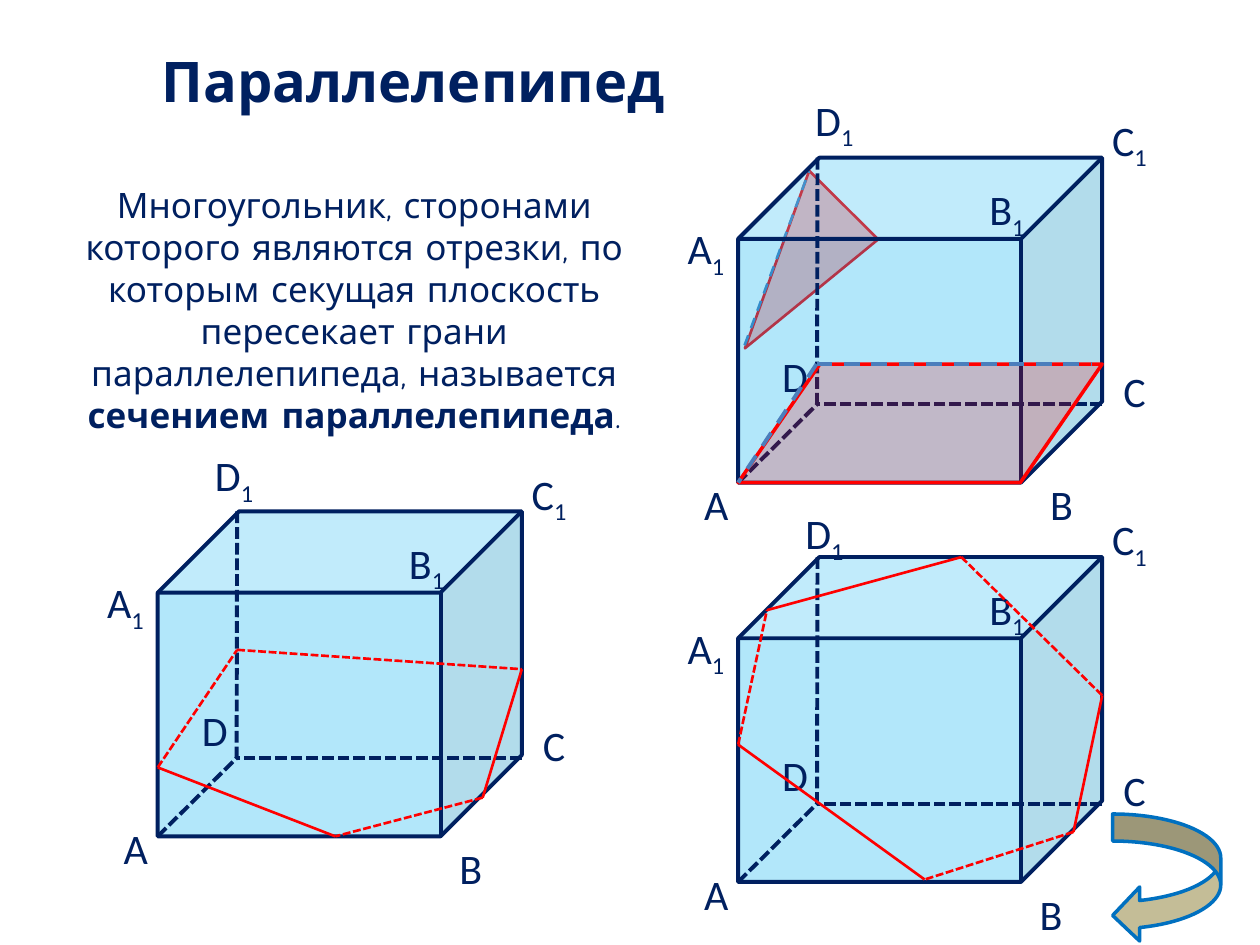
"""Slide on plane sections of a parallelepiped."""
from lxml.etree import SubElement
from pptx import Presentation
from pptx.dml.color import RGBColor
from pptx.enum.dml import MSO_LINE
from pptx.enum.shapes import MSO_CONNECTOR, MSO_SHAPE
from pptx.enum.text import MSO_AUTO_SIZE, PP_ALIGN
from pptx.oxml.ns import qn
from pptx.util import Cm, Pt

NAVY, RED, SKY, STEEL = "002060", "FF0000", "00B0F0", "4B7EBC"
SOLID, DOTTED, DASHED = None, MSO_LINE.SQUARE_DOT, MSO_LINE.DASH

TITLE = "Параллелепипед"
DEFINITION = [
    ("Многоугольник, сторонами которого являются отрезки, по которым секущая "
     "плоскость пересекает грани параллелепипеда, называется ", False),
    ("сечением параллелепипеда", True),
    (".", False),
]

SOLID_SIZE = (7.34, 6.55)
HIDDEN_VERTEX = (1.59, 4.97)
HIDDEN_ENDS = [(0, 6.55), (1.6, 0), (7.34, 4.97)]
VERTEX_LABELS = {
    "A1": (-1.4, 1.19), "A": (-1.19, 6.15), "B1": (4.67, 0.4), "C1": (7.14, -1),
    "D": (0.4, 3.76), "B": (5.56, 6.55), "C": (7.24, 4.06),
}
SOLIDS = [
    {"origin": (14.88, 3.18), "section": [],
     "labels": {"A": (-1.19, 6.35), "B": (5.77, 6.35), "D1": (1.19, -1.4)}},
    {"origin": (3.18, 10.31), "labels": {"D1": (0.79, -1.37)},
     "section": [(0, 5.16, DOTTED), (1.6, 2.79, DOTTED), (7.34, 3.18, SOLID),
                 (6.55, 5.77, DOTTED), (3.58, 6.55, SOLID)]},
    {"origin": (14.88, 11.23), "labels": {"D1": (0.99, -1.12)},
     "section": [(0, 3.78, DOTTED), (0.58, 1.07, SOLID), (4.5, 0, DOTTED),
                 (7.34, 2.79, SOLID), (6.76, 5.54, DOTTED), (3.76, 6.5, SOLID)]},
]

presentation = Presentation()
presentation.slide_width, presentation.slide_height = Cm(25.4), Cm(19.05)
slide = presentation.slides.add_slide(presentation.slide_layouts[6])


def rgb(code):
    return RGBColor.from_string(code)


def add_text(runs, left, top, width, height, size=24, font="Calibri"):
    box = slide.shapes.add_textbox(Cm(left), Cm(top), Cm(width), Cm(height))
    box.text_frame.word_wrap = True
    box.text_frame.auto_size = MSO_AUTO_SIZE.SHAPE_TO_FIT_TEXT
    paragraph = box.text_frame.paragraphs[0]
    paragraph.alignment = PP_ALIGN.CENTER
    for words, bold in runs:
        run = paragraph.add_run()
        run.text = words
        run.font.size, run.font.name, run.font.bold = Pt(size), font, bold
        run.font.color.rgb = rgb(NAVY)
    return paragraph


def add_figure(preset, left, top, width, height, fill, line, weight,
               opacity=100, adjustment=None, rotation=0):
    figure = slide.shapes.add_shape(preset, Cm(left), Cm(top), Cm(width), Cm(height))
    figure.shadow.inherit = False
    figure.rotation = rotation
    if adjustment is not None:
        figure.adjustments[0] = adjustment
    figure.fill.solid()
    figure.fill.fore_color.rgb = rgb(fill)
    if opacity < 100:
        tint = figure.fill._xPr.find(qn("a:solidFill"))[0]
        SubElement(tint, qn("a:alpha")).set("val", str(opacity * 1000))
    figure.line.color.rgb = rgb(line)
    figure.line.width = Pt(weight)


def add_edge(start, end, color, weight, dash=SOLID):
    edge = slide.shapes.add_connector(
        MSO_CONNECTOR.STRAIGHT, *(Cm(value) for value in (*start, *end)))
    edge.line.color.rgb = rgb(color)
    edge.line.width = Pt(weight)
    if dash is not None:
        edge.line.dash_style = dash
    SubElement(edge._element.spPr, qn("a:effectLst"))


def add_vertex_label(name, left, top):
    label = add_text([(part, False) for part in name], left, top, 1.5, 1.27)
    for index in label.runs[1:]:
        index.font._element.set("baseline", "-25000")


def add_solid(origin, labels):
    def place(point):
        return origin[0] + point[0], origin[1] + point[1]

    add_figure(MSO_SHAPE.CUBE, *origin, *SOLID_SIZE, SKY, NAVY, 2.25, opacity=30)
    for end in HIDDEN_ENDS:
        add_edge(place(end), place(HIDDEN_VERTEX), NAVY, 2.25, DOTTED)
    for name, offset in {**VERTEX_LABELS, **labels}.items():
        add_vertex_label(name, *place(offset))


def add_section(origin, section):
    for (x, y, dash), (next_x, next_y, _) in zip(section, section[1:] + section[:1]):
        add_edge((origin[0] + x, origin[1] + y),
                 (origin[0] + next_x, origin[1] + next_y), RED, 1.5, dash)


add_figure(MSO_SHAPE.ISOSCELES_TRIANGLE, 14.81, 3.63, 1.96, 3.45, RED, RED, 1.5,
           opacity=30, adjustment=0.18, rotation=224.9)
add_edge((15.01, 6.96), (16.31, 3.45), STEEL, 1.5, DASHED)
add_text([(TITLE, True)], 1.78, 0.81, 13.1, 1.62, size=32, font="Comic Neue")
add_text(DEFINITION, 0.79, 3.58, 12.7, 5.38, size=20, font="Comic Neue")

for solid in SOLIDS:
    add_solid(solid["origin"], solid["labels"])
for solid in SOLIDS:
    add_section(solid["origin"], solid["section"])

add_figure(MSO_SHAPE.CURVED_LEFT_ARROW, 22.43, 16.41, 2.18, 2.59, "C4BD97", "0070C0", 2)
add_figure(MSO_SHAPE.PARALLELOGRAM, 14.88, 7.34, 7.34, 2.39, RED, RED, 2,
           opacity=20, adjustment=0.69)
for far_end in [(22.02, 7.34), (14.88, 9.73)]:
    add_edge((16.46, 7.34), far_end, STEEL, 2.25, DASHED)

presentation.save("out.pptx")
